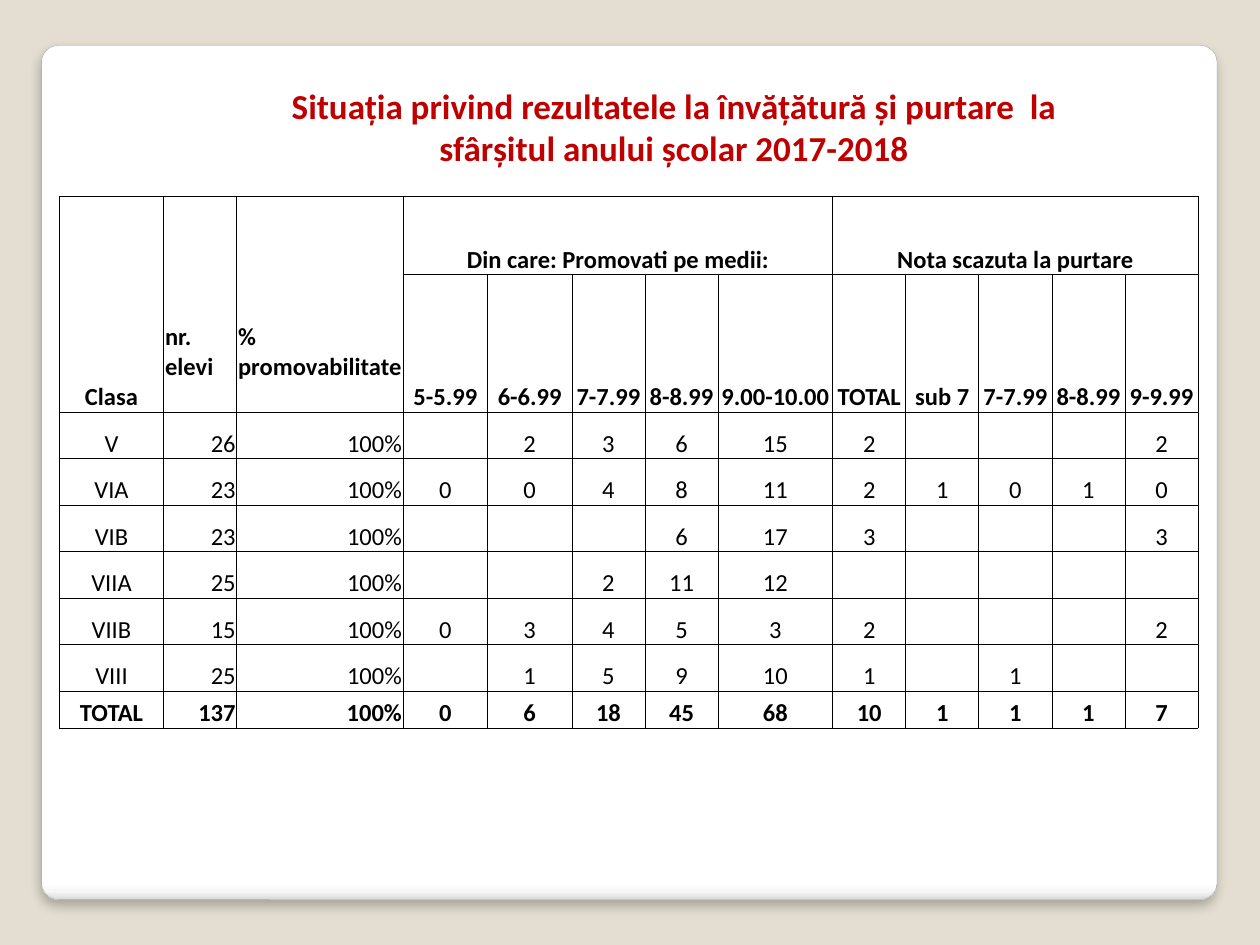
from lxml.etree import SubElement
from pptx import Presentation
from pptx.dml.color import RGBColor
from pptx.enum.shapes import MSO_SHAPE
from pptx.enum.text import MSO_ANCHOR, MSO_AUTO_SIZE, PP_ALIGN
from pptx.oxml import parse_xml
from pptx.oxml.ns import nsdecls, qn
from pptx.util import Inches, Pt

COLORS = {"background": "E3DED1", "panel": "FFFFFF", "panel_low": "F7F7F7",
          "panel_edge": "DADADA", "outline": "A4A4A4", "shadow": "000000",
          "title": "C00000", "text": "000000", "border": "000000"}
FONT = "Calibri"
TITLE = ("Situația privind rezultatele la învățătură și purtare  la "
         "sfârșitul anului școlar 2017-2018")

COLUMN_WIDTHS = [0.83, 0.58, 1.32, 0.67, 0.67, 0.58, 0.58, 0.91] + [0.58] * 5
ROW_HEIGHTS = [0.62, 1.09] + [0.37] * 6 + [0.29]
HEADER_ROWS = 2
LINE_HEIGHT = 0.24
GROUP_HEADINGS = ["Clasa", "nr.\nelevi", "% promovabilitate",
                  "Din care: Promovati pe medii:", "", "", "", "",
                  "Nota scazuta la purtare", "", "", "", ""]
GRADE_HEADINGS = ["", "", "", "5-5.99", "6-6.99", "7-7.99", "8-8.99", "9.00-10.00",
                  "TOTAL", "sub 7", "7-7.99", "8-8.99", "9-9.99"]
RESULTS = [
    ["V", 26, "100%", "", 2, 3, 6, 15, 2, "", "", "", 2],
    ["VIA", 23, "100%", 0, 0, 4, 8, 11, 2, 1, 0, 1, 0],
    ["VIB", 23, "100%", "", "", "", 6, 17, 3, "", "", "", 3],
    ["VIIA", 25, "100%", "", "", 2, 11, 12, "", "", "", "", ""],
    ["VIIB", 15, "100%", 0, 3, 4, 5, 3, 2, "", "", "", 2],
    ["VIII", 25, "100%", "", 1, 5, 9, 10, 1, "", 1, "", ""],
    ["TOTAL", 137, "100%", 0, 6, 18, 45, 68, 10, 1, 1, 1, 7],
]
# first row, first column, last row, last column
MERGES = [(0, 0, 1, 0), (0, 1, 1, 1), (0, 2, 1, 2), (0, 3, 0, 7), (0, 8, 0, 12)]


def rgb(name):
    return RGBColor.from_string(COLORS[name])


def format_text(frame, size, color, bold, align):
    for para in frame.paragraphs:
        para.alignment = align
        para.font.size = Pt(size)
        for span in para.runs:
            span.font.name = FONT
            span.font.size = Pt(size)
            span.font.bold = bold
            span.font.color.rgb = rgb(color)


def add_panel(page):
    """Rounded white card with a shaded lower edge, behind everything else."""
    panel = page.shapes.add_shape(MSO_SHAPE.ROUNDED_RECTANGLE, Inches(0.33),
                                  Inches(0.36), Inches(9.33), Inches(6.78))
    panel.adjustments[0] = 0.02
    panel.fill.gradient()
    panel.fill.gradient_angle = 270
    stops = panel._element.spPr.find(".//" + qn("a:gsLst"))
    stops.clear()
    for percent, name in [(0, "panel"), (98, "panel"), (99, "panel_low"),
                          (100, "panel_edge")]:
        stop = SubElement(stops, qn("a:gs"), pos=str(percent * 1000))
        SubElement(stop, qn("a:srgbClr"), val=COLORS[name])
    panel.line.color.rgb = rgb("outline")
    panel.line.width = Pt(0.16)
    panel._element.spPr.append(parse_xml(
        f'<a:effectLst {nsdecls("a")}>'
        f'<a:outerShdw blurRad="{Pt(6)}" dist="{Pt(4)}" dir="5400000" rotWithShape="0">'
        f'<a:srgbClr val="{COLORS["shadow"]}"><a:alpha val="25000"/></a:srgbClr>'
        '</a:outerShdw></a:effectLst>'))
    page.shapes._spTree.insert(2, panel._element)


def set_title(page):
    title = page.shapes.title
    title.left, title.top = Inches(2.11), Inches(0.62)
    title.width, title.height = Inches(6.48), Inches(0.77)
    frame = title.text_frame
    frame.text = TITLE
    frame.word_wrap = True
    frame.auto_size = MSO_AUTO_SIZE.NONE
    frame.vertical_anchor = MSO_ANCHOR.TOP
    format_text(frame, 20, "title", True, PP_ALIGN.CENTER)


def add_borders(cell):
    properties = cell._tc.get_or_add_tcPr()
    for index, side in enumerate(("L", "R", "T", "B")):
        properties.insert(index, parse_xml(
            f'<a:ln{side} {nsdecls("a")} w="{Pt(0.5)}"><a:solidFill>'
            f'<a:srgbClr val="{COLORS["border"]}"/></a:solidFill></a:ln{side}>'))


def alignment_for(row, column):
    if column not in (1, 2):
        return PP_ALIGN.CENTER
    return PP_ALIGN.LEFT if row < HEADER_ROWS else PP_ALIGN.RIGHT


def add_results_table(page):
    rows = [GROUP_HEADINGS, GRADE_HEADINGS] + RESULTS
    table = page.shapes.add_table(
        len(rows), len(COLUMN_WIDTHS), Inches(0.47), Inches(1.56),
        Inches(sum(COLUMN_WIDTHS)), Inches(sum(ROW_HEIGHTS))).table
    table.first_row = table.horz_banding = False
    for column, width in zip(table.columns, COLUMN_WIDTHS):
        column.width = Inches(width)
    for row, height in zip(table.rows, ROW_HEIGHTS):
        row.height = Inches(height)

    for r, values in enumerate(rows):
        bold = r < HEADER_ROWS or r == len(rows) - 1
        for c, value in enumerate(values):
            cell = table.cell(r, c)
            cell.text_frame.text = str(value)
            cell.vertical_anchor = MSO_ANCHOR.BOTTOM
            cell.margin_left = cell.margin_right = cell.margin_top = Inches(0.01)
            raised = r == 0 and c in (1, 2)
            cell.margin_bottom = Inches(LINE_HEIGHT if raised else 0)
            cell.fill.background()
            add_borders(cell)
            format_text(cell.text_frame, 14, "text", bold, alignment_for(r, c))
    for top, left, bottom, right in MERGES:
        table.cell(top, left).merge(table.cell(bottom, right))


def main():
    deck = Presentation()
    deck.slide_width, deck.slide_height = Inches(10), Inches(7.5)
    page = deck.slides.add_slide(deck.slide_layouts[5])
    page.background.fill.solid()
    page.background.fill.fore_color.rgb = rgb("background")
    add_panel(page)
    add_results_table(page)
    set_title(page)
    deck.save("out.pptx")


if __name__ == "__main__":
    main()
